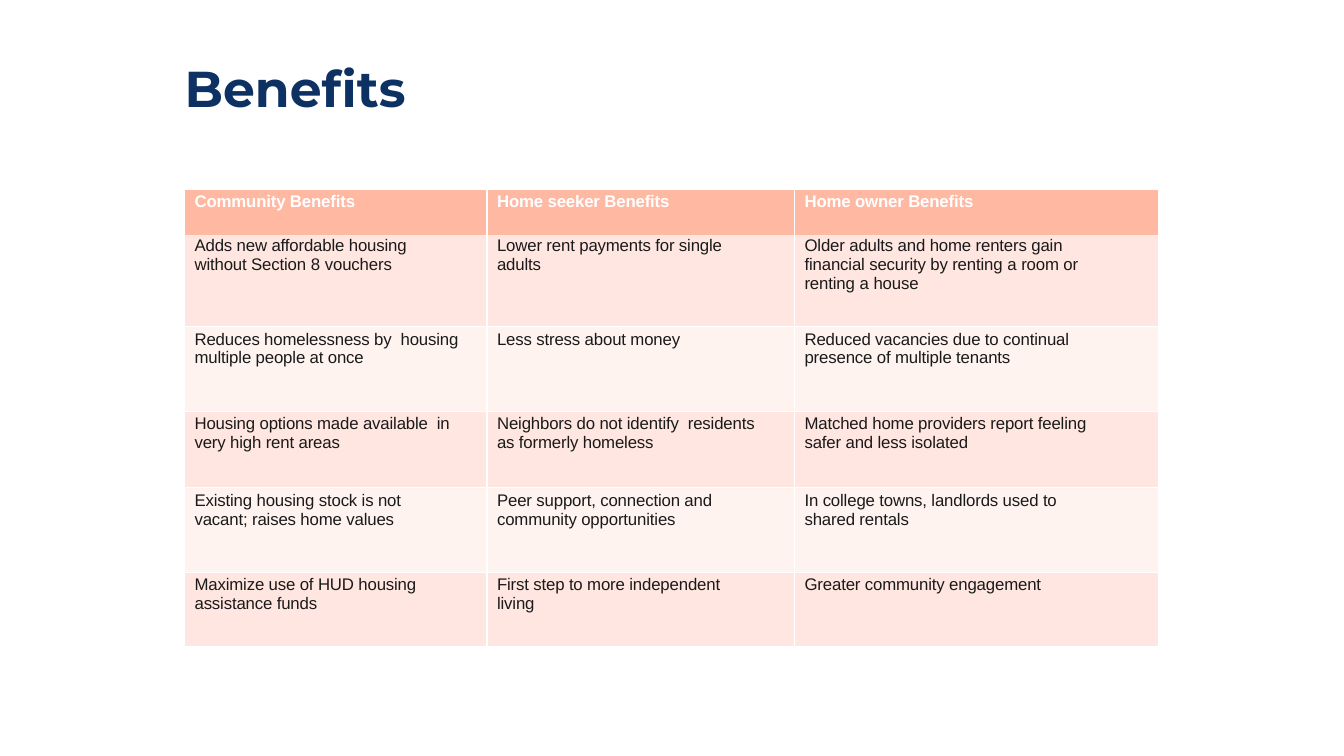
from lxml import etree
from pptx import Presentation
from pptx.dml.color import RGBColor
from pptx.enum.text import MSO_ANCHOR
from pptx.oxml.ns import qn
from pptx.util import Inches, Pt

BOTTOM = MSO_ANCHOR.BOTTOM

NAVY, INK, WHITE = "0D3162", "1A1A1A", "FFFFFF"
HEADER_FILL = "FFB8A2"
BAND_FILLS = ("FFE6E0", "FFF3F0")

COLUMN_WIDTHS = (3, 3.05, 3.61)
RIGHT_INSETS = (0.24, 0.33, 0.58)
ROW_HEIGHTS = (0.45, 0.91, 0.84, 0.76, 0.84, 0.74)

# "|" switches between tightened and normal letter spacing
BENEFITS = (
    ("Community Benefits", "Home seeker Benefits", "Home owner Benefits"),
    ("Adds new affordable housing  without Section |8 |vouchers",
     "Lower rent payments for single  adults",
     "Older adults and home renters gain  financial security by renting "
     "|a |room or  renting |a |house"),
    ("Reduces homelessness by  housing multiple people at once",
     "Less stress about money",
     "Reduced vacancies due to continual  presence of multiple tenants"),
    ("Housing options made available  in very high rent areas",
     "Neighbors do not identify  residents as formerly homeless",
     "Matched home providers report feeling  safer and less isolated"),
    ("Existing housing stock is not  vacant; raises home values",
     "Peer support, connection and  community opportunities",
     "In college towns, landlords used to  shared rentals"),
    ("Maximize use of HUD housing  assistance funds",
     "First step to more independent  living",
     "Greater community engagement"),
)


def color(hex_value):
    return RGBColor.from_string(hex_value)


def add_run(paragraph, text, font, size, hex_value, bold=False):
    run = paragraph.add_run()
    run.text = text
    run.font.name = font
    run.font.size = Pt(size)
    run.font.bold = bold
    run.font.color.rgb = color(hex_value)
    return run


def add_title(slide, text):
    title = slide.shapes.add_textbox(
        Inches(1.83), Inches(0.42), Inches(10.75), Inches(0.75))
    frame = title.text_frame
    frame.word_wrap = True
    frame.vertical_anchor = BOTTOM
    frame.margin_left = frame.margin_right = 0
    frame.margin_top = frame.margin_bottom = 0
    paragraph = frame.paragraphs[0]
    paragraph.line_spacing = Pt(36)
    add_run(paragraph, text, "Montserrat", 36, NAVY, bold=True)


def set_borders(cell, hidden_side):
    """White rules on all sides except the hidden one."""
    properties = cell._tc.get_or_add_tcPr()
    for side in ("lnL", "lnR", "lnT", "lnB"):
        line = etree.SubElement(properties, qn(f"a:{side}"), w=str(Pt(1)))
        if side == hidden_side:
            etree.SubElement(line, qn("a:noFill"))
        else:
            fill = etree.SubElement(line, qn("a:solidFill"))
            etree.SubElement(fill, qn("a:srgbClr"), val=WHITE)


def fill_cell(cell, text, row, column):
    is_header = row == 0
    set_borders(cell, {0: "lnB", 1: "lnT"}.get(row))
    cell.fill.solid()
    cell.fill.fore_color.rgb = color(
        HEADER_FILL if is_header else BAND_FILLS[(row - 1) % 2])
    cell.margin_left = Inches(0.1)
    cell.margin_right = Inches(RIGHT_INSETS[column])
    cell.margin_top = Inches(0.01 if row == 1 else 0.03)
    cell.margin_bottom = 0

    paragraph = cell.text_frame.paragraphs[0]
    paragraph.line_spacing = 1.0 if is_header else 1.01
    for index, part in enumerate(text.split("|")):
        run = add_run(paragraph, part, "Arial", 12,
                      WHITE if is_header else INK, bold=is_header)
        run.font._element.set("spc", "0" if index % 2 else "-10")


def add_benefits_table(slide):
    table = slide.shapes.add_table(
        len(ROW_HEIGHTS), len(COLUMN_WIDTHS), Inches(1.83), Inches(1.88),
        Inches(sum(COLUMN_WIDTHS)), Inches(sum(ROW_HEIGHTS))).table
    for column, width in zip(table.columns, COLUMN_WIDTHS):
        column.width = Inches(width)
    for row, height in zip(table.rows, ROW_HEIGHTS):
        row.height = Inches(height)
    for row, texts in enumerate(BENEFITS):
        for column, text in enumerate(texts):
            fill_cell(table.cell(row, column), text, row, column)


def main():
    deck = Presentation()
    deck.slide_width = Inches(13.33)
    deck.slide_height = Inches(7.5)
    slide = deck.slides.add_slide(deck.slide_layouts[6])

    # Heading, then the table of benefits by group
    add_title(slide, "Benefits")
    add_benefits_table(slide)
    deck.save("out.pptx")


if __name__ == "__main__":
    main()
